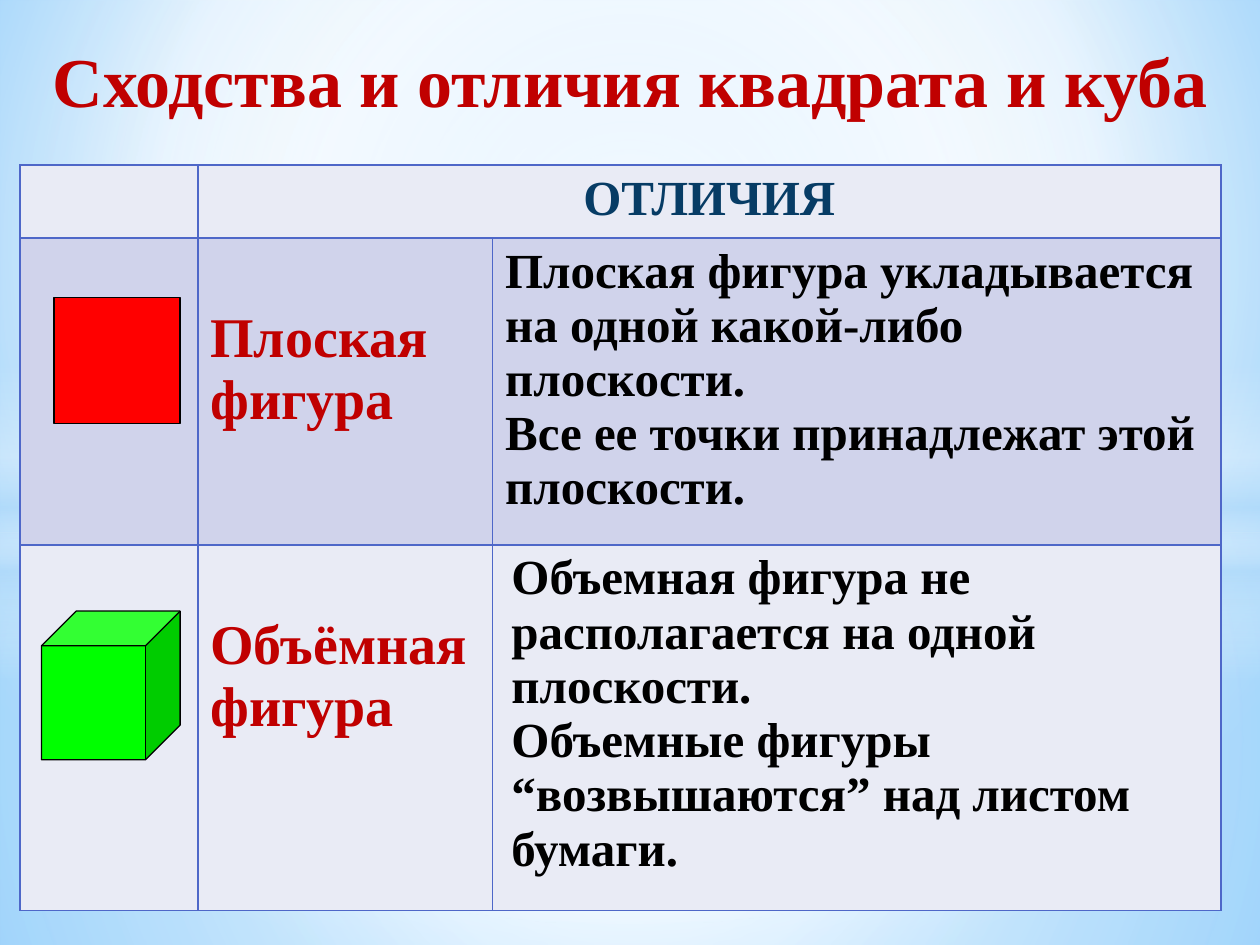
from lxml import etree
from pptx import Presentation
from pptx.dml.color import RGBColor
from pptx.enum.shapes import MSO_SHAPE as SHAPE
from pptx.enum.text import PP_ALIGN as ALIGN
from pptx.oxml import parse_xml
from pptx.oxml.ns import nsdecls, qn
from pptx.util import Inches, Pt

FONT = "Times New Roman"
TITLE = "Сходства и отличия квадрата и куба"
RED, NAVY, BLACK = "C00000", "073C65", "000000"
LIGHT, BAND, BORDER = "E9EBF5", "D0D3EB", "4E67C8"
CENTER = (50, 50, 50, 50)

BACKGROUND = [(0, "9ED5FF", 100), (60, "FFFFFF", 100), (100, "5BB9FF", 100)]
GLOWS = [
    (SHAPE.RECTANGLE, (0, 4.23, 10, 3.27), CENTER,
     [(0, "FFFFFF", 91), (37, "FFFFFF", 76), (100, "B4DCFA", 79)]),
    (SHAPE.RECTANGLE, (0, 0, 10, 4.23), CENTER,
     [(0, "FFFFFF", 89), (48, "FFFFFF", 62), (100, "B4DCFA", 79)]),
    (SHAPE.RECTANGLE, (0, 2.9, 10, 2.5), None,
     [(0, "FFFFFF", 0), (29, "FFFFFF", 30), (45, "B4DCFA", 40),
      (55, "FFFFFF", 26), (65, "B4DCFA", 60), (100, "FFFFFF", 0)]),
    (SHAPE.OVAL, (0, 1.75, 10, 5.58), CENTER,
     [(0, "FFFFFF", 100), (54, "FFFFFF", 0)]),
]
COLS = [1.41, 2.34, 5.78]
ROWS = [0.58, 2.34, 2.79]
ROW_FILLS = [LIGHT, BAND, LIGHT]
HEADER = "ОТЛИЧИЯ"
FIGURES = [
    ("Плоская фигура",
     "Плоская фигура укладывается на одной какой-либо плоскости.\n"
     "Все ее точки принадлежат этой плоскости.", 0.1),
    ("Объёмная фигура",
     "Объемная фигура не располагается на одной плоскости.\n"
     "Объемные фигуры “возвышаются” над листом бумаги.", 0.15),
]
SOLIDS = [
    (SHAPE.RECTANGLE, (0.43, 2.36, 1, 1), "FF0000"),
    (SHAPE.CUBE, (0.33, 4.85, 1.1, 1.18), "00FF00"),
]


def rgb(value):
    return RGBColor.from_string(value)


def set_gradient(parent, stops, focus):
    stops_xml = "".join(
        f'<a:gs pos="{pos * 1000}"><a:srgbClr val="{color}">'
        f'<a:alpha val="{alpha * 1000}"/></a:srgbClr></a:gs>'
        for pos, color, alpha in stops)
    if focus:
        sides = " ".join(f'{k}="{v * 1000}"' for k, v in zip("ltrb", focus))
        shade = f'<a:path path="circle"><a:fillToRect {sides}/></a:path>'
    else:
        shade = '<a:lin ang="5400000" scaled="0"/>'
    solid = parent.find(qn("a:solidFill"))
    parent.replace(solid, parse_xml(
        f'<a:gradFill {nsdecls("a")} rotWithShape="1">'
        f'<a:gsLst>{stops_xml}</a:gsLst>{shade}</a:gradFill>'))


def add_shape(s, kind, box, color):
    sp = s.shapes.add_shape(kind, *map(Inches, box))
    sp.shadow.inherit = False
    sp.fill.solid()
    sp.fill.fore_color.rgb = rgb(color)
    return sp


def write(tf, text, size, color, align=ALIGN.LEFT):
    tf.text = text
    tf.word_wrap = True
    for p in tf.paragraphs:
        p.alignment = align
        for r in p.runs:
            r.font.name = FONT
            r.font.size = Pt(size)
            r.font.bold = True
            r.font.color.rgb = rgb(color)


def style_cell(cell, color):
    cell.fill.solid()
    cell.fill.fore_color.rgb = rgb(color)
    tcPr = cell._tc.get_or_add_tcPr()
    for i, side in enumerate(("lnL", "lnR", "lnT", "lnB")):
        tcPr.insert(i, parse_xml(
            f'<a:{side} {nsdecls("a")} w="12700"><a:solidFill>'
            f'<a:srgbClr val="{BORDER}"/></a:solidFill></a:{side}>'))


def add_table(s):
    frame = s.shapes.add_table(
        len(ROWS), len(COLS), Inches(0.16), Inches(1.31),
        Inches(sum(COLS)), Inches(sum(ROWS)))
    table = frame.table
    for column, width in zip(table.columns, COLS):
        column.width = Inches(width)
    for row, height, color in zip(table.rows, ROWS, ROW_FILLS):
        row.height = Inches(height)
        for cell in row.cells:
            style_cell(cell, color)
    header = table.cell(0, 1)
    header.merge(table.cell(0, 2))
    write(header.text_frame, HEADER, 28, NAVY, ALIGN.CENTER)
    for i, (name, description, indent) in enumerate(FIGURES, 1):
        label, detail = table.cell(i, 1), table.cell(i, 2)
        label.margin_top = Inches(0.55)
        write(label.text_frame, name, 32, RED)
        detail.margin_left = Inches(indent)
        write(detail.text_frame, description, 28, BLACK)


def main():
    prs = Presentation()
    prs.slide_width, prs.slide_height = Inches(10), Inches(7.5)
    s = prs.slides.add_slide(prs.slide_layouts[6])
    s.background.fill.solid()
    bgPr = next(s._element.iter(qn("p:bgPr")))
    set_gradient(bgPr, BACKGROUND, (20, 10, 20, 60))
    for kind, box, focus, stops in GLOWS:
        sp = add_shape(s, kind, box, "FFFFFF")
        sp.line.fill.background()
        set_gradient(sp._element.spPr, stops, focus)

    title = s.shapes.add_textbox(*map(Inches, (0.12, 0.25, 9.61, 0.71)))
    title.text_frame.margin_left = Inches(0.3)
    title.text_frame.margin_right = Inches(0)
    write(title.text_frame, TITLE, 40, RED)

    add_table(s)
    for kind, box, color in SOLIDS:
        sp = add_shape(s, kind, box, color)
        sp.line.color.rgb = rgb(BLACK)
        sp.line.width = Pt(0.75)
    prs.save("out.pptx")


if __name__ == "__main__":
    main()
